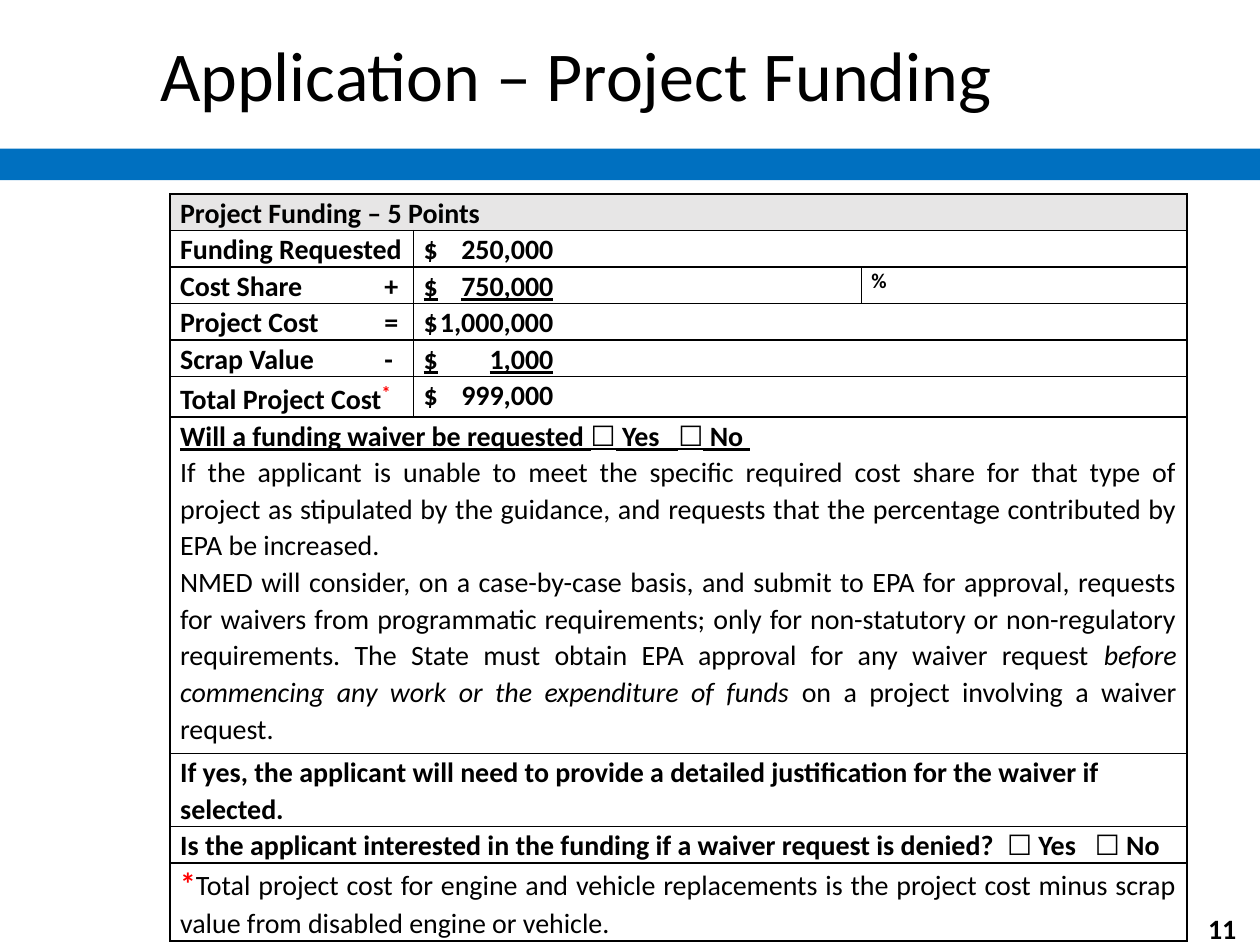
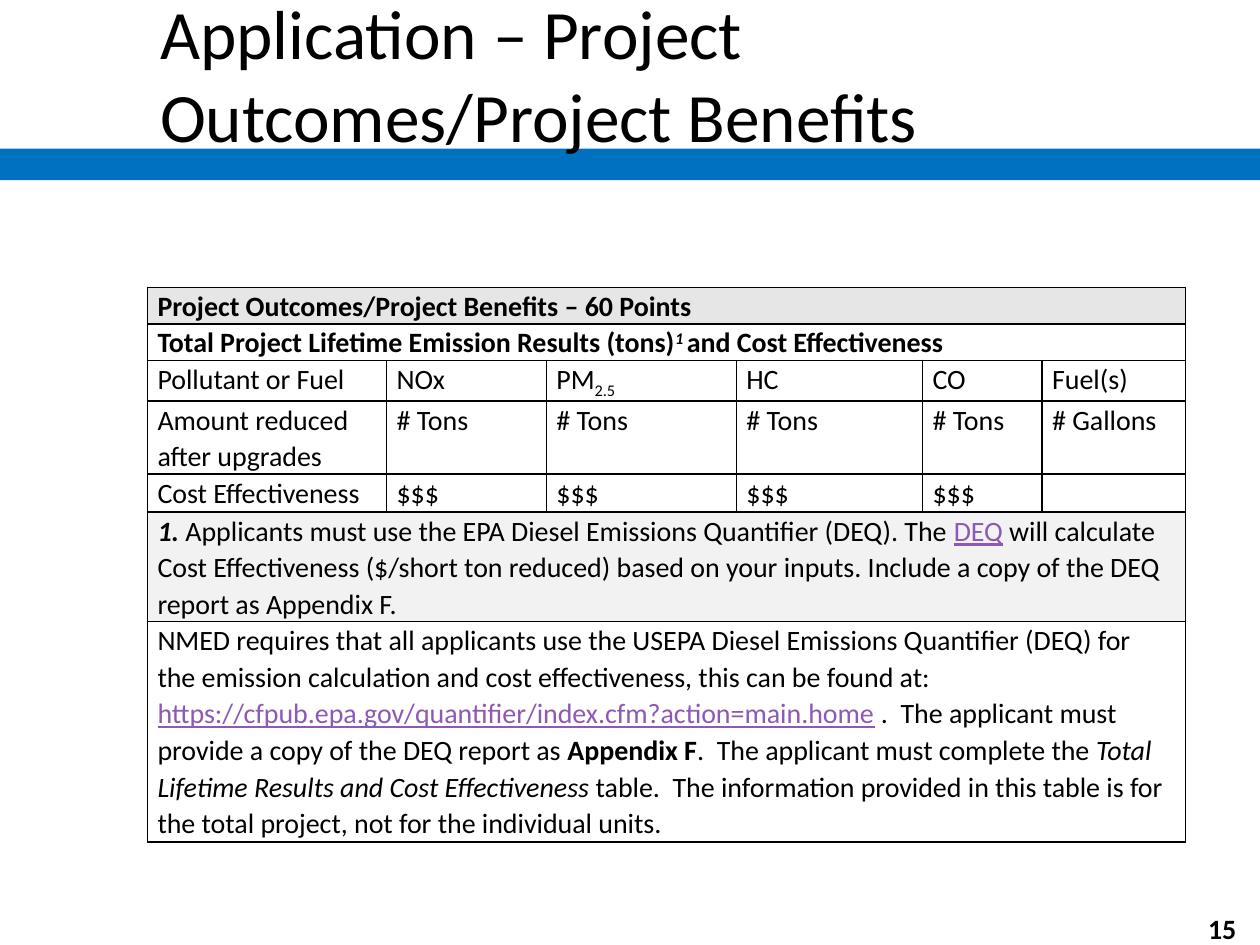
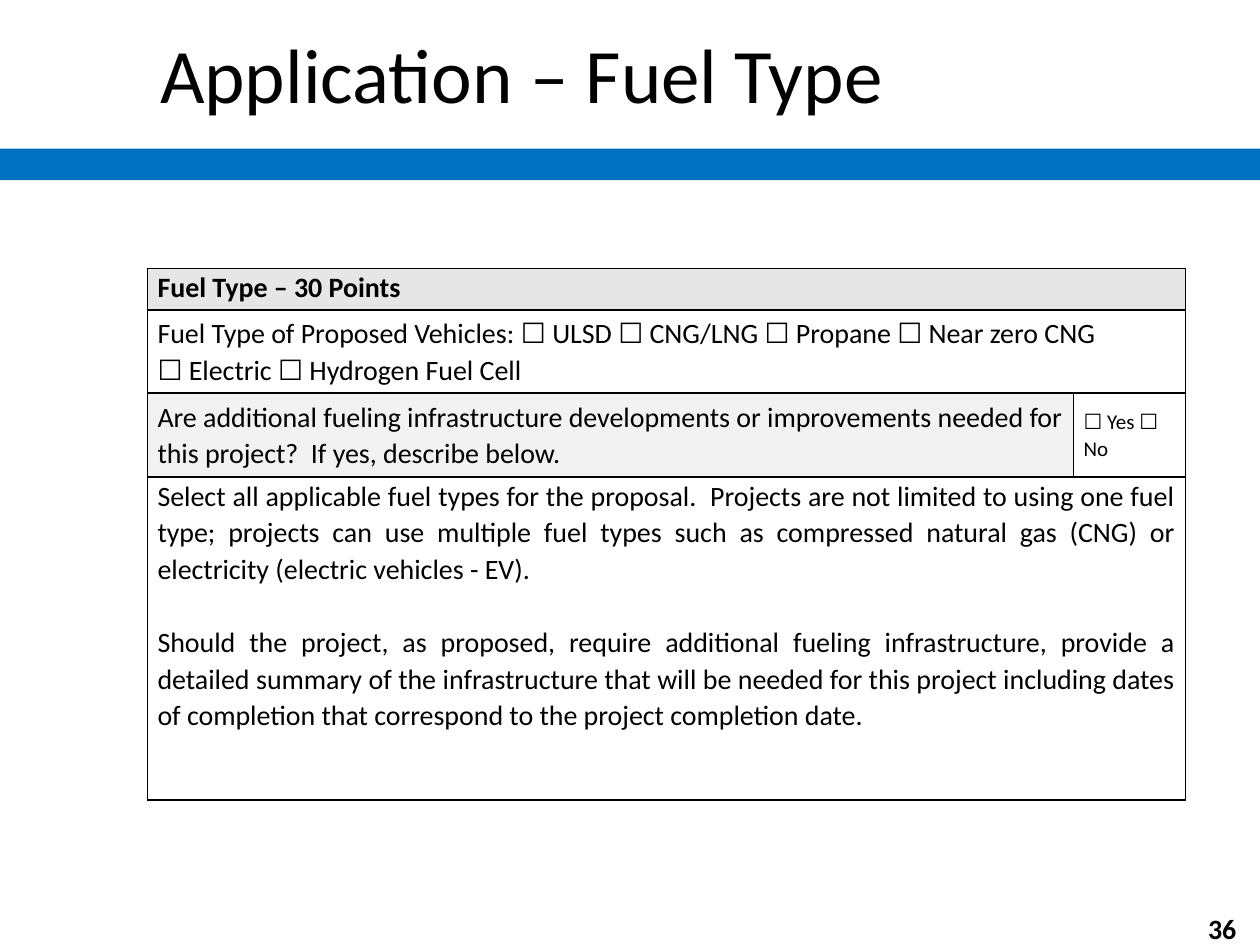
import itertools

import pptx
import pptx.dml.color
import pptx.enum.shapes
import pptx.enum.text
import pptx.oxml
import pptx.oxml.ns
import pptx.util

COLUMNS, ROWS = 1000, 750  # grid of the slide, 100 steps to the inch
COLORS = {
    "text": "000000",
    "band": "0070C0",
    "header": "E7E6E6",
    "note": "F2F2F2",
    "plain": "FFFFFF",
    "mark": "FF0000",
    "link": "8E58B6",
}
FONT, CHECKBOX_FONT, CHECKBOX = "Calibri", "Roboto", "☐"
BODY_SIZE, LINE_SPACING, CELL_INSET = 16, 1.07, 8
TITLE_BOX = (117, 4, 866, 108)
BAND_BOX = (0, 118, COLUMNS, 25)
NUMBER_BOX = (941, 723, 58, 27)
LEFT, JUSTIFY, CENTER = (
    pptx.enum.text.PP_ALIGN.LEFT,
    pptx.enum.text.PP_ALIGN.JUSTIFY,
    pptx.enum.text.PP_ALIGN.CENTER,
)
MIDDLE = pptx.enum.text.MSO_ANCHOR.MIDDLE
TOP = pptx.enum.text.MSO_ANCHOR.TOP
LINK = {"color": "link", "underline": True}


def grid(steps):
    return pptx.util.Inches(steps / 100)


def rgb(name):
    return pptx.dml.color.RGBColor.from_string(COLORS[name])


def add_run(paragraph, text, size=BODY_SIZE, font=FONT, color="text", bold=False,
            italic=False, underline=False, baseline=0):
    run = paragraph.add_run()
    run.text = text
    run.font.size = pptx.util.Pt(size)
    run.font.name = font
    run.font.color.rgb = rgb(color)
    run.font.bold, run.font.italic, run.font.underline = bold, italic, underline
    if baseline:
        run._r.get_or_add_rPr().set("baseline", str(baseline * 1000))


def add_tab(paragraph, position, kind):
    tabs = pptx.oxml.parse_xml(
        f'<a:tabLst {pptx.oxml.ns.nsdecls("a")}>'
        f'<a:tab pos="{grid(position)}" algn="{kind}"/></a:tabLst>')
    paragraph._p.get_or_add_pPr().append(tabs)


def write_text(frame, paragraphs, align=LEFT, spacing=None, gap=0, tab=None, **style):
    """Fill a frame; a paragraph is a string or a list of strings and (string, style) pairs."""
    frame.word_wrap = True
    for index, content in enumerate(paragraphs):
        paragraph = frame.add_paragraph() if index else frame.paragraphs[0]
        if tab:
            add_tab(paragraph, *tab)
        paragraph.alignment = align
        if spacing:
            paragraph.line_spacing = spacing
        if index and gap:
            paragraph.space_before = pptx.util.Pt(gap)
        for part in [content] if isinstance(content, str) else content:
            text, changes = (part, {}) if isinstance(part, str) else part
            if not text:
                add_run(paragraph, text, **style)
            for boxed, letters in itertools.groupby(text, lambda letter: letter == CHECKBOX):
                font = CHECKBOX_FONT if boxed else FONT
                add_run(paragraph, "".join(letters), **{**style, "font": font, **changes})


def cell(*paragraphs, span=1, fill="plain", anchor=TOP, **style):
    return {"paragraphs": paragraphs, "span": span, "fill": fill, "anchor": anchor,
            "style": {"align": JUSTIFY, "spacing": LINE_SPACING, **style}}


def outline(table_cell):
    properties = table_cell._tc.get_or_add_tcPr()
    for index, side in enumerate(("lnL", "lnR", "lnT", "lnB")):
        properties.insert(index, pptx.oxml.parse_xml(
            f'<a:{side} {pptx.oxml.ns.nsdecls("a")} w="{pptx.util.Pt(1)}"><a:solidFill>'
            f'<a:srgbClr val="{COLORS["text"]}"/></a:solidFill></a:{side}>'))


def fill_cell(target, content):
    target.margin_left = target.margin_right = grid(CELL_INSET)
    target.margin_top = target.margin_bottom = 0
    target.vertical_anchor = content["anchor"]
    write_text(target.text_frame, content["paragraphs"], **content["style"])


def add_form(slide, box, widths, heights, rows):
    """Add a table whose columns and rows share out the box by the given weights."""
    left, top, width, height = box
    table = slide.shapes.add_table(len(heights), len(widths), *map(grid, box)).table
    table.first_row = table.horz_banding = False
    for column, weight in zip(table.columns, widths):
        column.width = grid(width * weight / sum(widths))
    for row, weight in zip(table.rows, heights):
        row.height = grid(height * weight / sum(heights))
    for row_index, contents in enumerate(rows):
        start = 0
        for content in contents:
            end = start + content["span"]
            for column_index in range(start, end):
                part = table.cell(row_index, column_index)
                part.fill.solid()
                part.fill.fore_color.rgb = rgb(content["fill"])
                outline(part)
            target = table.cell(row_index, start)
            if content["span"] > 1:
                target.merge(table.cell(row_index, end - 1))
            fill_cell(target, content)
            start = end


def add_page(presentation, title_text, number, title_size):
    slide = presentation.slides.add_slide(presentation.slide_layouts[5])
    title = slide.shapes.title
    title.left, title.top, title.width, title.height = map(grid, TITLE_BOX)
    title.text_frame.auto_size = pptx.enum.text.MSO_AUTO_SIZE.NONE
    title.text_frame.vertical_anchor = MIDDLE
    write_text(title.text_frame, [title_text], size=title_size)

    band = slide.shapes.add_shape(
        pptx.enum.shapes.MSO_SHAPE.RECTANGLE, *map(grid, BAND_BOX))
    band.shadow.inherit = False
    band.fill.solid()
    band.fill.fore_color.rgb = rgb("band")
    band.line.fill.background()
    title.element.addprevious(band.element)  # the title lies over the band

    number_box = slide.shapes.add_textbox(*map(grid, NUMBER_BOX))
    number_box.text_frame.vertical_anchor = MIDDLE
    write_text(number_box.text_frame, [number], align=CENTER, bold=True)
    return slide


def funding_slide(presentation):
    slide = add_page(presentation, "Application – Project Funding", "11", 40)

    def label(*parts):
        return cell(list(parts), bold=True, align=LEFT, tab=(162, "l"))

    def amount(text, span=2, underline=False):
        return cell(text, span=span, bold=True, underline=underline,
                    align=LEFT, tab=(103, "r"))

    waiver = cell(
        [("Will a funding waiver be requested ☐ Yes   ☐ No ",
          {"bold": True, "underline": True})],
        "If the applicant is unable to meet the specific required cost share for that type of "
        "project as stipulated by the guidance, and requests that the percentage contributed "
        "by EPA be increased.",
        ["NMED will consider, on a case-by-case basis, and submit to EPA for approval, "
         "requests for waivers from programmatic requirements; only for non-statutory or "
         "non-regulatory requirements. The State must obtain EPA approval for any waiver "
         "request ",
         ("before commencing any work or the expenditure of funds ", {"italic": True}),
         "on a project involving a waiver request."],
        span=3)
    rows = [
        [cell("Project Funding – 5 Points", span=3, fill="header", bold=True)],
        [label("Funding Requested"), amount("$\t250,000")],
        [label("Cost Share\t+"), amount("$\t750,000", span=1, underline=True),
         cell("%", size=12, bold=True)],
        [label("Project Cost\t="), amount("$\t1,000,000")],
        [label("Scrap Value\t-"), amount("$\t1,000", underline=True)],
        [label("Total Project Cost", ("*", {"size": 18, "color": "mark", "baseline": 30})),
         amount("$\t999,000")],
        [waiver],
        [cell("If yes, the applicant will need to provide a detailed justification for the "
              "waiver if selected.", span=3, bold=True, align=LEFT)],
        [cell("Is the applicant interested in the funding if a waiver request is denied?  "
              "☐ Yes   ☐ No", span=3, bold=True)],
        [cell([("*", {"size": 18, "color": "mark", "bold": True}),
               "Total project cost for engine and vehicle replacements is the project cost "
               "minus scrap value from disabled engine or vehicle."], span=3)],
    ]
    heights = [29] * 5 + [32, 267, 58, 29, 62]
    add_form(slide, (135, 154, 807, 593), [193, 355, 258], heights, rows)


def benefits_slide(presentation):
    slide = add_page(
        presentation, "Application – Project Outcomes/Project Benefits", "15", 39.6)
    pollutants = ["NOx", ["PM", ("2.5", {"baseline": -25})], "HC", "CO", "Fuel(s)"]
    rows = [
        [cell("Project Outcomes/Project Benefits – 60 Points",
              span=6, fill="header", bold=True)],
        [cell(["Total Project Lifetime Emission Results (tons)",
               ("1 ", {"italic": True, "baseline": 30}),
               "and Cost Effectiveness"], span=6, bold=True)],
        [cell(text) for text in ["Pollutant or Fuel", *pollutants]],
        [cell("Amount reduced after upgrades", align=LEFT),
         *[cell(text) for text in ["# Tons"] * 4 + ["# Gallons"]]],
        [cell(text) for text in ["Cost Effectiveness"] + ["$$$"] * 4 + [""]],
        [cell([("1.", {"bold": True, "italic": True}),
               " Applicants must use the EPA Diesel Emissions Quantifier (DEQ). The ",
               ("DEQ", LINK),
               " will calculate Cost Effectiveness ($/short ton reduced) based on your "
               "inputs. Include a copy of the DEQ report as Appendix F."],
              span=6, fill="note", align=LEFT)],
        [cell(["NMED requires that all applicants use the USEPA Diesel Emissions Quantifier "
               "(DEQ) for the emission calculation and cost effectiveness, this can be found "
               "at: ",
               ("https://cfpub.epa.gov/quantifier/index.cfm?action=main.home", LINK),
               " .  The applicant must provide a copy of the DEQ report as ",
               ("Appendix F", {"bold": True}),
               ".  The applicant must complete the ",
               ("Total Lifetime Results and Cost Effectiveness", {"italic": True}),
               " table.  The information provided in this table is for the total project, "
               "not for the individual units."], span=6, align=LEFT)],
    ]
    add_form(slide, (117, 228, 824, 439), [190, 127, 151, 148, 95, 114],
             [29, 29, 32, 58, 29, 87, 175], rows)


def fuel_slide(presentation):
    slide = add_page(presentation, "Application – Fuel Type", "36", 44)
    rows = [
        [cell("Fuel Type – 30 Points", span=2, fill="header", bold=True)],
        [cell("Fuel Type of Proposed Vehicles: ☐ ULSD ☐ CNG/LNG ☐ Propane ☐ Near zero CNG",
              "☐ Electric ☐ Hydrogen Fuel Cell", span=2, anchor=MIDDLE)],
        [cell("Are additional fueling infrastructure developments or improvements needed for "
              "this project?  If yes, describe below.",
              fill="note", anchor=MIDDLE, align=LEFT),
         cell("☐ Yes ☐ No", size=12, anchor=MIDDLE, align=LEFT)],
        [cell("Select all applicable fuel types for the proposal.  Projects are not limited to "
              "using one fuel type; projects can use multiple fuel types such as compressed "
              "natural gas (CNG) or electricity (electric vehicles - EV).",
              "Should the project, as proposed, require additional fueling infrastructure, "
              "provide a detailed summary of the infrastructure that will be needed for this "
              "project including dates of completion that correspond to the project "
              "completion date.", span=2, gap=21)],
    ]
    add_form(slide, (117, 213, 824, 422), [735, 89], [33, 66, 67, 257], rows)


def main():
    presentation = pptx.Presentation()
    presentation.slide_width, presentation.slide_height = grid(COLUMNS), grid(ROWS)
    for build in (funding_slide, benefits_slide, fuel_slide):
        build(presentation)
    presentation.save("out.pptx")


if __name__ == "__main__":
    main()
